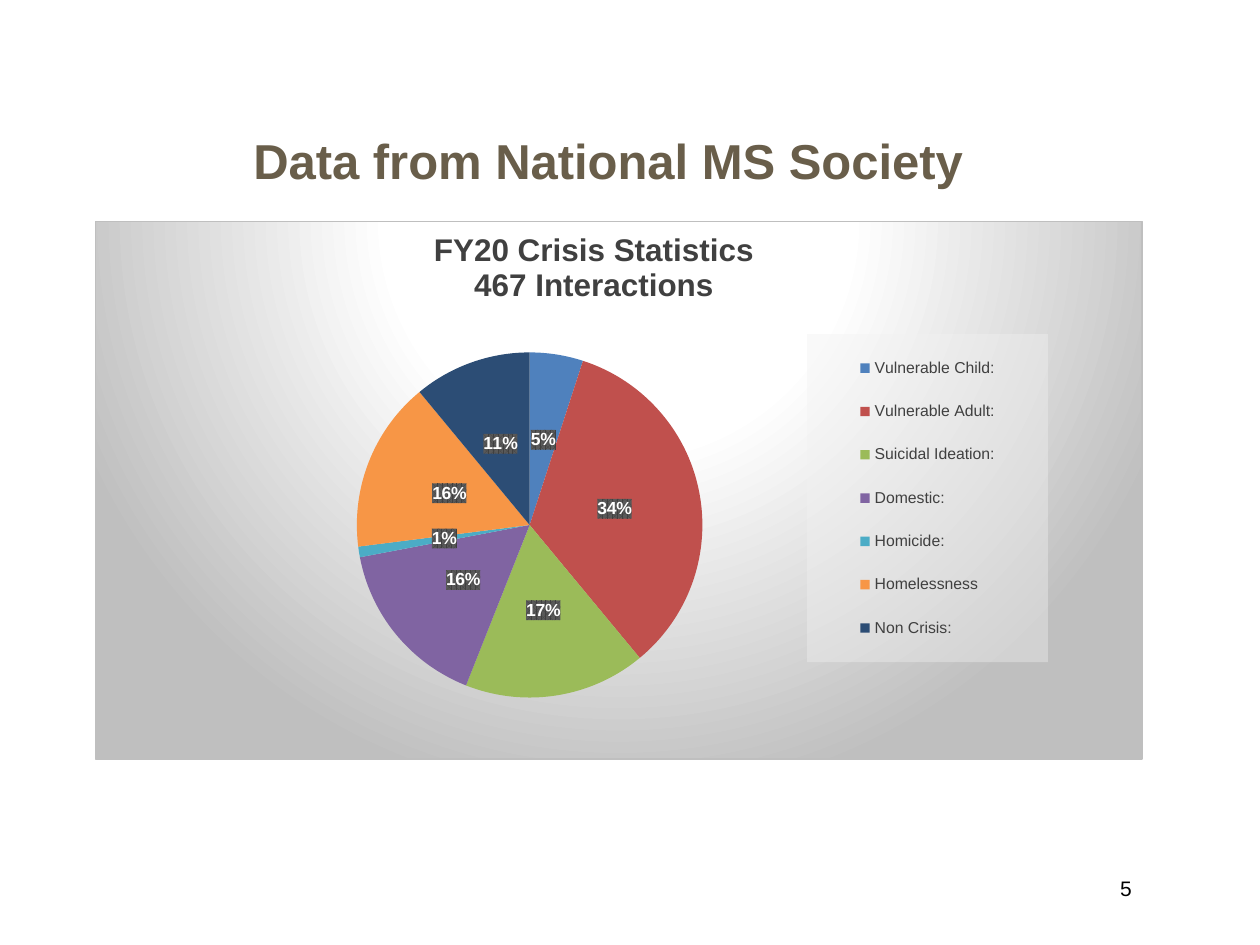
from dataclasses import dataclass

from pptx import Presentation
from pptx.chart.data import CategoryChartData
from pptx.dml.color import RGBColor
from pptx.enum.chart import XL_CHART_TYPE as ChartType
from pptx.enum.chart import XL_LABEL_POSITION as LabelPosition
from pptx.enum.chart import XL_LEGEND_POSITION as LegendPosition
from pptx.enum.text import MSO_ANCHOR as Anchor
from pptx.enum.text import PP_ALIGN as Align
from pptx.oxml import parse_xml
from pptx.oxml.ns import nsdecls
from pptx.util import Inches, Pt

CRISIS_SHARES = [
    ("Vulnerable Child:", 5, "4F81BD"),
    ("Vulnerable Adult:", 34, "C0504D"),
    ("Suicidal Ideation:", 17, "9BBB59"),
    ("Domestic:", 16, "8064A2"),
    ("Homicide:", 1, "4BACC6"),
    ("Homelessness", 16, "F79646"),
    ("Non Crisis:", 11, "2C4D75"),
]


@dataclass(frozen=True)
class Theme:
    font: str = "Arial"
    heading: str = "695E4A"
    black: str = "000000"
    white: str = "FFFFFF"
    dark: str = "404040"
    label_stripe: str = "595959"
    edge: str = "BFBFBF"
    legend_panel: str = "F2F2F2"
    heading_size: int = 28
    chart_title_size: int = 18
    number_size: int = 12
    label_size: int = 10
    legend_size: int = 9


def solid(color, alpha=100):
    return (f'<a:solidFill><a:srgbClr val="{color}"><a:alpha val="{alpha * 1000}"/>'
            "</a:srgbClr></a:solidFill>")


def shape_properties(content):
    return parse_xml(f'<c:spPr {nsdecls("c", "a")}>{content}</c:spPr>')


def set_layout(part, x, y, width=None, height=None, inner=False):
    """Place a chart part by fractions of the chart's size."""
    for old in part.xpath("c:layout"):
        part.remove(old)
    target = '<c:layoutTarget val="inner"/>' if inner else ""
    modes = '<c:xMode val="edge"/><c:yMode val="edge"/>'
    values = {"x": x, "y": y, "w": width, "h": height}
    fractions = "".join(f'<c:{key} val="{value}"/>'
                        for key, value in values.items() if value is not None)
    layout = parse_xml(f'<c:layout {nsdecls("c")}><c:manualLayout>'
                       f"{target}{modes}{fractions}</c:manualLayout></c:layout>")
    overlay = part.xpath("c:overlay")
    if overlay:
        overlay[0].addprevious(layout)
    else:
        part.insert(0, layout)


class SlideBuilder:
    def __init__(self, slide, theme):
        self.slide = slide
        self.theme = theme

    def style(self, font, size, color, bold=False):
        font.name = self.theme.font
        font.size = Pt(size)
        font.bold = bold
        font.color.rgb = RGBColor.from_string(color)

    def heading(self, text, left, top, width, height):
        title = self.slide.shapes.title
        title.left, title.top = Inches(left), Inches(top)
        title.width, title.height = Inches(width), Inches(height)
        frame = title.text_frame
        frame.text = text
        frame.vertical_anchor = Anchor.BOTTOM
        paragraph = frame.paragraphs[0]
        paragraph.alignment = Align.CENTER
        self.style(paragraph.font, self.theme.heading_size, self.theme.heading, True)

    def page_number(self, text, left, top, width, height):
        box = self.slide.shapes.add_textbox(
            Inches(left), Inches(top), Inches(width), Inches(height))
        frame = box.text_frame
        frame.word_wrap = True
        frame.vertical_anchor = Anchor.MIDDLE
        frame.text = text
        paragraph = frame.paragraphs[0]
        paragraph.alignment = Align.RIGHT
        self.style(paragraph.font, self.theme.number_size, self.theme.black)

    def pie(self, title, shares, left, top, width, height):
        data = CategoryChartData()
        data.categories = [name for name, _, _ in shares]
        data.add_series("Series 1", [share for _, share, _ in shares])
        chart = self.slide.shapes.add_chart(
            ChartType.PIE, Inches(left), Inches(top),
            Inches(width), Inches(height), data).chart
        self.style(chart.font, self.theme.label_size, self.theme.black)

        plot = chart.plots[0]
        plot.vary_by_categories = True
        series = plot.series[0]
        for index, (_, _, color) in enumerate(shares):
            fill = series.points[index].format.fill
            fill.solid()
            fill.fore_color.rgb = RGBColor.from_string(color)
        set_layout(chart.element.xpath("c:chart/c:plotArea")[0],
                   0.25, 0.19, 0.33, 0.75, inner=True)

        self.chart_title(chart, title)
        self.percent_labels(chart, series)
        self.legend(chart)
        self.chart_background(chart)

    def chart_title(self, chart, text):
        chart.has_title = True
        frame = chart.chart_title.text_frame
        frame.text = text
        for paragraph in frame.paragraphs:
            paragraph.alignment = Align.CENTER
            self.style(paragraph.font, self.theme.chart_title_size, self.theme.dark, True)
        set_layout(chart.element.xpath("c:chart/c:title")[0], 0.32, 0.01)

    def percent_labels(self, chart, series):
        labels = series.data_labels
        labels.show_percentage = True
        labels.show_value = False
        labels.position = LabelPosition.CENTER
        self.style(labels.font, self.theme.label_size, self.theme.white, True)
        pattern = ('<a:pattFill prst="pct75">'
                   f'<a:fgClr><a:srgbClr val="{self.theme.dark}"/></a:fgClr>'
                   f'<a:bgClr><a:srgbClr val="{self.theme.label_stripe}"/></a:bgClr>'
                   "</a:pattFill>")
        chart.element.xpath(".//c:ser/c:dLbls/c:txPr")[0].addprevious(
            shape_properties(pattern))

    def legend(self, chart):
        chart.has_legend = True
        chart.legend.position = LegendPosition.RIGHT
        chart.legend.include_in_layout = False
        self.style(chart.legend.font, self.theme.legend_size, self.theme.dark)
        legend = chart.element.xpath("c:chart/c:legend")[0]
        set_layout(legend, 0.68, 0.21, 0.23, 0.61)
        legend.xpath("c:txPr")[0].addprevious(
            shape_properties(solid(self.theme.legend_panel, 39)))

    def chart_background(self, chart):
        stops = [(0, self.theme.white), (39, self.theme.white), (100, self.theme.edge)]
        stop_list = "".join(f'<a:gs pos="{position * 1000}"><a:srgbClr val="{color}"/></a:gs>'
                            for position, color in stops)
        gradient = (f'<a:gradFill><a:gsLst>{stop_list}</a:gsLst><a:path path="circle">'
                    '<a:fillToRect l="50000" t="-80000" r="50000" b="180000"/>'
                    "</a:path></a:gradFill>")
        border = f'<a:ln w="{Pt(0.75)}">{solid(self.theme.edge)}</a:ln>'
        chart.element.xpath("c:chart")[0].addnext(shape_properties(gradient + border))


def main():
    deck = Presentation()
    deck.slide_width, deck.slide_height = Inches(10), Inches(7.5)
    title_only = deck.slide_layouts[5]
    builder = SlideBuilder(deck.slides.add_slide(title_only), Theme())
    builder.heading("Data from National MS Society ", 0.67, 0.3, 8.42, 1.25)
    builder.page_number("5", 6.75, 6.85, 2.33, 0.4)
    builder.pie("FY20 Crisis Statistics\n467 Interactions", CRISIS_SHARES,
                0.75, 1.75, 8.32, 4.28)
    deck.save("out.pptx")


if __name__ == "__main__":
    main()
